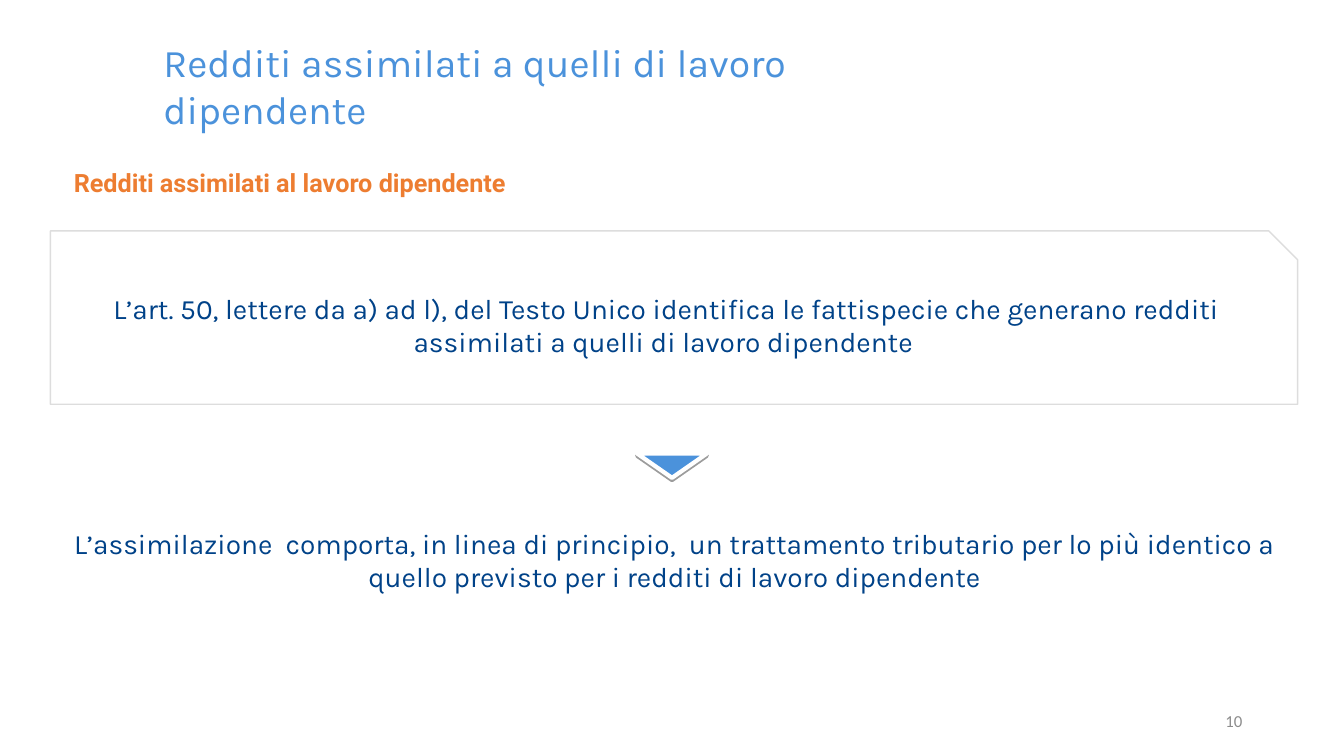
from lxml import etree
from pptx import Presentation
from pptx.dml.color import RGBColor
from pptx.enum.shapes import MSO_SHAPE
from pptx.enum.text import MSO_ANCHOR, PP_ALIGN
from pptx.oxml.ns import qn
from pptx.util import Inches, Pt

LEFT, CENTER, RIGHT = PP_ALIGN.LEFT, PP_ALIGN.CENTER, PP_ALIGN.RIGHT
TOP, MIDDLE = MSO_ANCHOR.TOP, MSO_ANCHOR.MIDDLE
SNIPPED, TRIANGLE = MSO_SHAPE.SNIP_1_RECTANGLE, MSO_SHAPE.ISOSCELES_TRIANGLE

BLUE = RGBColor(0x4B, 0x92, 0xDB)
NAVY = RGBColor(0x00, 0x42, 0x88)
ORANGE = RGBColor(0xED, 0x7D, 0x31)
GREY = RGBColor(0x8C, 0x8C, 0x8C)
BORDER = RGBColor(0xDD, 0xDD, 0xDD)
WHITE = RGBColor(0xFF, 0xFF, 0xFF)


def box(*lengths):
    return [Inches(length) for length in lengths]


def write(shape, text, font, size, color, align=LEFT, anchor=TOP, wrap=True, bold=False):
    frame = shape.text_frame
    frame.word_wrap = wrap
    frame.vertical_anchor = anchor
    paragraph = frame.paragraphs[0]
    paragraph.alignment = align
    run = paragraph.add_run()
    run.text = text
    style = {"name": font, "size": Pt(size), "bold": bold}
    for attribute, value in style.items():
        setattr(run.font, attribute, value)
    run.font.color.rgb = color
    return paragraph


prs = Presentation()
prs.slide_width, prs.slide_height = box(13.33, 7.5)
slide = prs.slides.add_slide(prs.slide_layouts[5])
shapes = slide.shapes

title = shapes.title
title.left, title.top, title.width, title.height = box(1.52, 0.33, 7.82, 0.57)
write(title, "Redditi assimilati a quelli di lavoro dipendente", "Karla", 28, BLUE)

subtitle = shapes.add_textbox(*box(0.5, 1.52, 4.75, 0.45))
heading = write(subtitle, "Redditi assimilati al lavoro dipendente", "Roboto", 18, ORANGE,
                CENTER, wrap=False, bold=True)
heading.line_spacing = 1.3

page_number = shapes.add_textbox(*box(9.42, 6.95, 3, 0.4))
write(page_number, "10", "Calibri", 12, GREY, RIGHT, MIDDLE)

statements = [
    (0.58, 4.62, False,
     "L’assimilazione  comporta, in linea di principio,  un trattamento tributario "
     "per lo più identico a quello previsto per i redditi di lavoro dipendente"),
    (0.5, 2.29, True,
     "L’art. 50, lettere da a) ad l), del Testo Unico identifica le fattispecie che "
     "generano redditi assimilati a quelli di lavoro dipendente "),
]
for left, top, framed, text in statements:
    statement = shapes.add_shape(SNIPPED, *box(left, top, 12.37, 1.72))
    statement.shadow.inherit = False
    if framed:
        statement.fill.solid()
        statement.fill.fore_color.rgb = WHITE
        statement.line.color.rgb = BORDER
        statement.line.width = Pt(1)
    else:
        statement.fill.background()
        statement.line.fill.background()
    write(statement, text, "Karla", 20, NAVY, CENTER, MIDDLE)

pointer = shapes.add_shape(TRIANGLE, *box(6.32, 4.5, 0.69, 0.24))
pointer.rotation = 180
pointer.fill.solid()
pointer.fill.fore_color.rgb = BLUE
pointer.line.color.rgb = WHITE
pointer.line.width = Pt(3)
pointer.shadow.inherit = False
effects = pointer.element.spPr.find(qn("a:effectLst"))
shadow = etree.SubElement(effects, qn("a:outerShdw"), blurRad="0", dist=str(Pt(1.6)),
                          dir="5400000", algn="t", rotWithShape="0")
shadow_color = etree.SubElement(shadow, qn("a:srgbClr"), val="000000")
etree.SubElement(shadow_color, qn("a:alpha"), val="38000")

prs.save("out.pptx")
